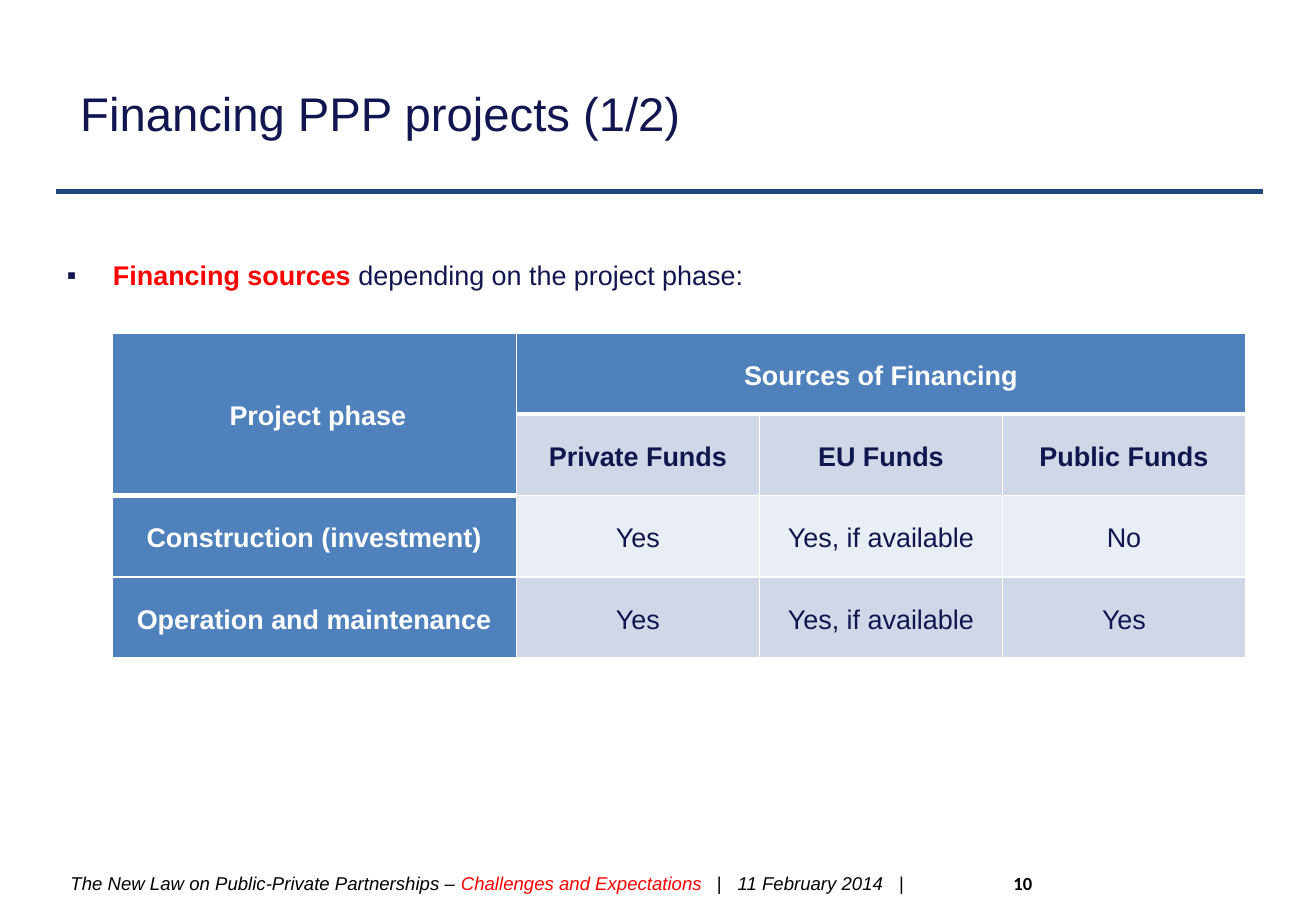
from dataclasses import dataclass
from typing import Any

import pptx
import pptx.dml.color
import pptx.enum.shapes
import pptx.enum.text
import pptx.oxml.ns
import pptx.util
from lxml import etree

Inches = pptx.util.Inches
Pt = pptx.util.Pt
ALIGN = pptx.enum.text.PP_ALIGN

NAVY, RED, WHITE, BLACK = "121650", "FF0000", "FFFFFF", "000000"
RULE_BLUE, HEAD_BLUE, BAND_DARK, BAND_LIGHT = "1F497D", "4F81BD", "D0D8E8", "E9EDF4"


@dataclass
class Run:
    text: str
    color: str
    size: float = 16
    bold: bool = False
    italic: bool = False
    font: str = "Arial"


PHASE_ROWS = [
    ["\N{NO-BREAK SPACE}Project phase", "Sources of Financing", "", ""],
    ["", "Private Funds", "EU Funds", "Public Funds"],
    ["Construction (investment)", "Yes", "Yes, if available", "No"],
    ["Operation and maintenance", "Yes", "Yes, if available", "Yes"],
]
COLUMN_WIDTHS = [3.33, 2, 2, 2]
ROW_HEIGHT = 0.67

FOOTER = [
    Run("The New Law on Public-Private Partnerships – ", BLACK, 11, italic=True),
    Run("Challenges and Expectations", RED, 11, italic=True),
    Run("\t|\t", BLACK, 11),
    Run("11 February 2014", BLACK, 11, italic=True),
    Run("\t|\t", BLACK, 11),
    Run("10", BLACK, 11, bold=True, font="Calibri"),
]
FOOTER_TABS = [5.32, 5.49, 6.82, 7.76]


def rgb(color: str) -> pptx.dml.color.RGBColor:
    return pptx.dml.color.RGBColor.from_string(color)


def add(parent: Any, tag: str, **attrs: Any) -> Any:
    """Append a DrawingML element to parent."""
    el = etree.SubElement(parent, pptx.oxml.ns.qn(f"a:{tag}"))
    for name, value in attrs.items():
        el.set(name, str(value))
    return el


def add_runs(p: Any, runs: list[Run]) -> None:
    for run in runs:
        r = p.add_run()
        r.text = run.text
        r.font.name = run.font
        r.font.size = Pt(run.size)
        r.font.bold = run.bold
        r.font.italic = run.italic
        r.font.color.rgb = rgb(run.color)


def place(sp: Any, left: float, top: float, width: float, height: float) -> Any:
    """Position a text shape and return its wrapped text frame."""
    sp.left, sp.top = Inches(left), Inches(top)
    sp.width, sp.height = Inches(width), Inches(height)
    tf = sp.text_frame
    tf.word_wrap = True
    tf.auto_size = pptx.enum.text.MSO_AUTO_SIZE.NONE
    return tf


def pad_middle(tf: Any) -> None:
    tf.vertical_anchor = pptx.enum.text.MSO_ANCHOR.MIDDLE
    tf.margin_left = tf.margin_right = Inches(0.12)
    tf.margin_top = tf.margin_bottom = Inches(0.06)


def add_title(s: Any) -> None:
    tf = place(s.shapes.title, 0.54, 0.3, 9.75, 1.25)
    pad_middle(tf)
    p = tf.paragraphs[0]
    p.alignment = ALIGN.LEFT
    add_runs(p, [Run("Financing PPP projects (1/2)", NAVY, 28)])


def add_rule(s: Any) -> None:
    y = Inches(1.58)
    line = s.shapes.add_connector(
        pptx.enum.shapes.MSO_CONNECTOR.STRAIGHT, Inches(0.46), y, Inches(10.39), y)
    line.line.color.rgb = rgb(RULE_BLUE)
    line.line.width = Pt(3)
    add(line._element.spPr, "effectLst")


def add_body(s: Any) -> None:
    tf = place(s.placeholders[1], 0.45, 2.08, 9.93, 0.5)
    p = tf.paragraphs[0]
    pPr = p._p.get_or_add_pPr()
    pPr.set("marL", str(Inches(0.38)))
    pPr.set("indent", str(-Inches(0.38)))
    add(add(pPr, "buClr"), "srgbClr", val=NAVY)
    add(pPr, "buFont", typeface="Arial")
    add(pPr, "buChar", char="▪")
    p.alignment = ALIGN.JUSTIFY
    p.space_before = Pt(0)
    add_runs(p, [Run("Financing sources ", RED, bold=True),
                 Run("depending on the project phase:", NAVY)])


def heavy_below(row: int, col: int) -> bool:
    """Tell whether a header cell ends in the thick line."""
    return row == 0 or (row, col) == (1, 0)


def add_borders(cell: Any, row: int, col: int) -> None:
    top = 3 if row > 0 and heavy_below(row - 1, col) else 1
    bottom = 3 if heavy_below(row, col) else 1
    tcPr = cell._tc.get_or_add_tcPr()
    for side, width in (("L", 1), ("R", 1), ("T", top), ("B", bottom)):
        ln = add(tcPr, f"ln{side}", w=Pt(width))
        add(add(ln, "solidFill"), "srgbClr", val=WHITE)


def fill_cell(cell: Any, row: int, col: int, text: str) -> None:
    header = row == 0 or col == 0
    add_borders(cell, row, col)
    cell.fill.solid()
    band = BAND_DARK if row % 2 else BAND_LIGHT
    cell.fill.fore_color.rgb = rgb(HEAD_BLUE if header else band)
    cell.vertical_anchor = pptx.enum.text.MSO_ANCHOR.MIDDLE
    cell.margin_left = cell.margin_right = Inches(0.07)
    cell.margin_top = cell.margin_bottom = 0
    if text:
        p = cell.text_frame.paragraphs[0]
        p.alignment = ALIGN.CENTER
        p.line_spacing = 1.15
        p.space_after = Pt(10)
        add_runs(p, [Run(text, WHITE if header else NAVY, bold=header or row == 1)])


def add_phase_table(s: Any) -> None:
    rows, cols = len(PHASE_ROWS), len(COLUMN_WIDTHS)
    table = s.shapes.add_table(
        rows, cols, Inches(0.92), Inches(2.74),
        Inches(sum(COLUMN_WIDTHS)), Inches(ROW_HEIGHT * rows)).table
    table.first_row = table.horz_banding = False
    for column, width in zip(table.columns, COLUMN_WIDTHS):
        column.width = Inches(width)
    for row, texts in enumerate(PHASE_ROWS):
        table.rows[row].height = Inches(ROW_HEIGHT)
        for col, text in enumerate(texts):
            fill_cell(table.cell(row, col), row, col, text)
    table.cell(0, 0).merge(table.cell(1, 0))
    table.cell(0, 1).merge(table.cell(0, 3))


def add_footer(s: Any) -> None:
    tf = place(s.shapes.add_textbox(0, 0, 0, 0), 0.46, 7.06, 8.45, 0.42)
    pad_middle(tf)
    p = tf.paragraphs[0]
    tabs = add(p._p.get_or_add_pPr(), "tabLst")
    for pos in FOOTER_TABS:
        add(tabs, "tab", pos=Inches(pos), algn="l")
    add_runs(p, FOOTER)


def main() -> None:
    prs = pptx.Presentation()
    prs.slide_width, prs.slide_height = Inches(10.83), Inches(7.5)
    s = prs.slides.add_slide(prs.slide_layouts[1])
    add_title(s)
    add_body(s)
    add_rule(s)
    add_phase_table(s)
    add_footer(s)
    prs.save("out.pptx")


if __name__ == "__main__":
    main()
